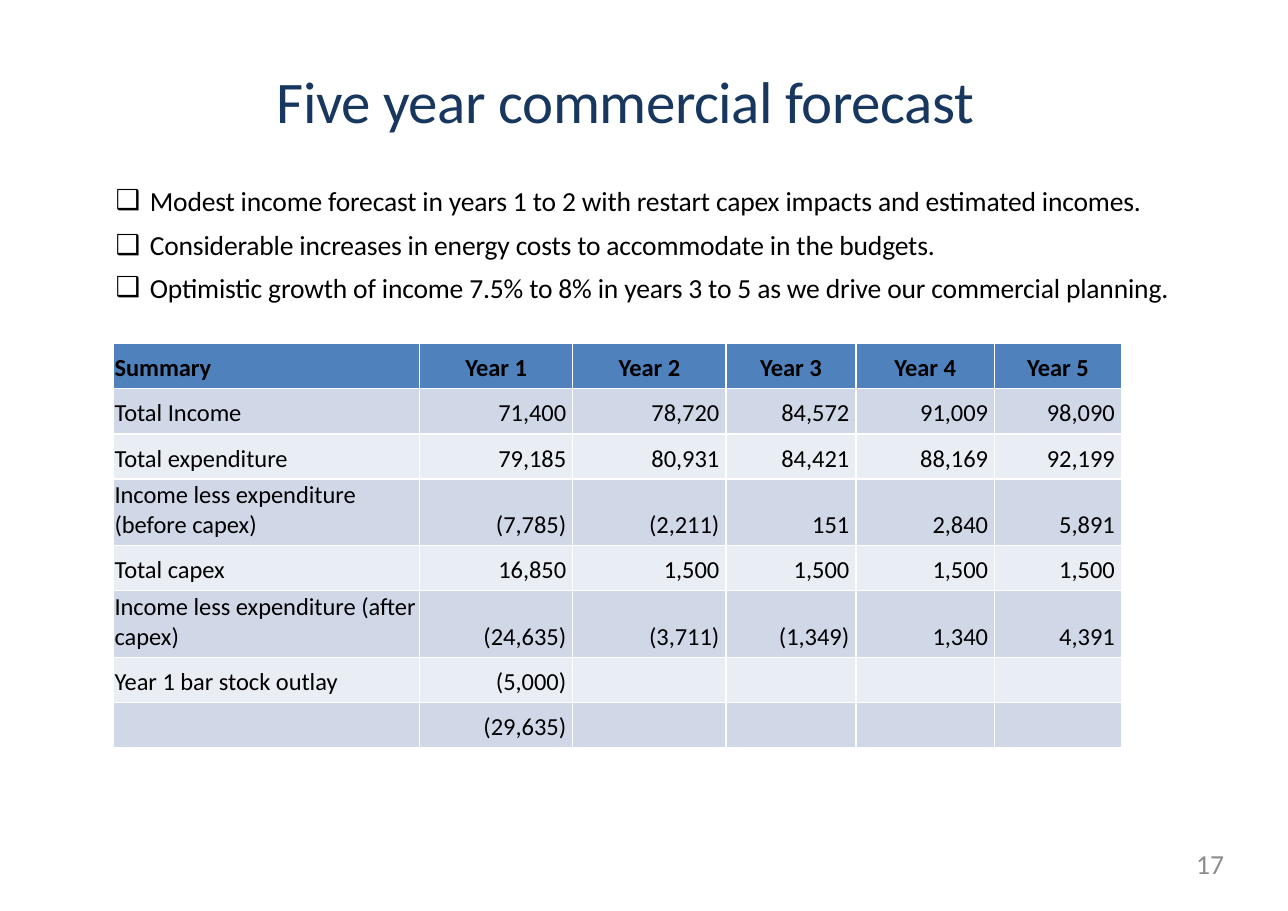
"""Build the five year commercial forecast slide."""
from dataclasses import dataclass

import pptx
import pptx.dml.color
import pptx.enum.text
import pptx.oxml.ns
import pptx.presentation
import pptx.shapes.autoshape
import pptx.slide
import pptx.table
import pptx.text.text
import pptx.util
from lxml import etree

SLIDE_WIDTH = pptx.util.Inches(11.69)
SLIDE_HEIGHT = pptx.util.Inches(8.27)
LEFT, CENTER, RIGHT = (
    pptx.enum.text.PP_ALIGN.LEFT,
    pptx.enum.text.PP_ALIGN.CENTER,
    pptx.enum.text.PP_ALIGN.RIGHT,
)
HEADER_FILL = "4F81BD"
BAND_FILLS = ("D0D8E8", "E9EDF4")


@dataclass(frozen=True)
class Region:
    """A rectangle in hundredths of the slide's width and height."""
    left: float
    top: float
    width: float
    height: float

    def box(self) -> tuple[int, int, int, int]:
        """Return left, top, width and height as slide lengths."""
        return (columns(self.left), rows(self.top), columns(self.width), rows(self.height))


@dataclass(frozen=True)
class TextStyle:
    """The look of a paragraph; tracking is in hundredths of a point."""
    size: float
    color: str = "000000"
    bold: bool = False
    align: pptx.enum.text.PP_ALIGN = LEFT
    tracking: int = 0


@dataclass(frozen=True)
class Point:
    """A bulleted statement and the space above it in points."""
    text: str
    space_before: float


TITLE_REGION = Region(21.47, 6.89, 54.92, 8.1)
POINTS_REGION = Region(8.81, 18.98, 83.49, 14.39)
PAGE_REGION = Region(72.03, 92.99, 23.01, 4.96)
FORECAST_COLUMNS = (23.78, 11.89, 11.89, 10.09, 10.78, 9.84)
FORECAST_ROW = 4.96

POINTS = (
    Point("Modest income forecast in years 1 to 2 with restart capex impacts and estimated incomes.", 7.2),
    Point("Considerable increases in energy costs to accommodate in the budgets.", 7.2),
    Point("Optimistic growth of income 7.5% to 8% in years 3 to 5 as we drive our commercial planning.", 6.2),
)
FORECAST = (
    ("Summary", "Year 1", "Year 2", "Year 3", "Year 4", "Year 5"),
    ("Total Income", "71,400", "78,720", "84,572", "91,009", "98,090"),
    ("Total expenditure", "79,185", "80,931", "84,421", "88,169", "92,199"),
    ("Income less expenditure (before capex)", "(7,785)", "(2,211)", "151", "2,840", "5,891"),
    ("Total capex", "16,850", "1,500", "1,500", "1,500", "1,500"),
    ("Income less expenditure (after capex)", "(24,635)", "(3,711)", "(1,349)", "1,340", "4,391"),
    ("Year 1 bar stock outlay", "(5,000)", "", "", "", ""),
    ("", "(29,635)", "", "", "", ""),
)


def columns(share: float) -> int:
    """Convert hundredths of the slide's width to a length."""
    return round(SLIDE_WIDTH * share / 100)


def rows(share: float) -> int:
    """Convert hundredths of the slide's height to a length."""
    return round(SLIDE_HEIGHT * share / 100)


def rgb(color: str) -> pptx.dml.color.RGBColor:
    """Turn a hex string into a colour."""
    return pptx.dml.color.RGBColor.from_string(color)


def style_paragraph(paragraph: pptx.text.text._Paragraph, style: TextStyle) -> None:
    """Apply a text style to a whole paragraph."""
    paragraph.alignment = style.align
    font = paragraph.font
    font.name = "Calibri"
    font.size = pptx.util.Pt(style.size)
    font.bold = style.bold
    font.color.rgb = rgb(style.color)
    if style.tracking:
        paragraph._p.pPr.defRPr.set("spc", str(style.tracking))


def place(shape: pptx.shapes.autoshape.Shape, region: Region, inset_top: float) -> pptx.text.text.TextFrame:
    """Move a text shape into its region and prepare its frame."""
    shape.left, shape.top, shape.width, shape.height = region.box()
    frame = shape.text_frame
    frame.word_wrap = True
    frame.auto_size = pptx.enum.text.MSO_AUTO_SIZE.NONE
    frame.vertical_anchor = pptx.enum.text.MSO_ANCHOR.TOP
    frame.margin_left = frame.margin_right = frame.margin_bottom = 0
    frame.margin_top = pptx.util.Inches(inset_top)
    return frame


def add_bullet(paragraph: pptx.text.text._Paragraph) -> None:
    """Give a paragraph a box bullet with a hanging indent."""
    properties = paragraph._p.get_or_add_pPr()
    properties.set("marL", str(pptx.util.Inches(0.33)))
    properties.set("indent", str(pptx.util.Inches(-0.31)))
    bullet = etree.SubElement(properties, pptx.oxml.ns.qn("a:buChar"))
    bullet.set("char", "❑")


def add_title(slide: pptx.slide.Slide) -> None:
    """Write the slide's title."""
    frame = place(slide.shapes.title, TITLE_REGION, 0.02)
    frame.text = "Five year commercial forecast"
    heading = frame.paragraphs[0]
    heading.space_before = pptx.util.Pt(1.1)
    style_paragraph(heading, TextStyle(38.5, "17375E", tracking=-30))


def add_points(slide: pptx.slide.Slide) -> None:
    """Write the bulleted statements."""
    frame = place(slide.placeholders[1], POINTS_REGION, 0.1)
    frame.text = "\n".join(point.text for point in POINTS)
    for paragraph, point in zip(frame.paragraphs, POINTS):
        add_bullet(paragraph)
        paragraph.space_before = pptx.util.Pt(point.space_before)
        style_paragraph(paragraph, TextStyle(18, tracking=-10))


def add_page_number(slide: pptx.slide.Slide) -> None:
    """Write the page number in the lower right corner."""
    frame = place(slide.shapes.add_textbox(*PAGE_REGION.box()), PAGE_REGION, 0)
    frame.text = "17"
    style_paragraph(frame.paragraphs[0], TextStyle(18, "8C8C8C", align=RIGHT))


def fill_cell(cell: pptx.table._Cell, text: str, fill: str, style: TextStyle) -> None:
    """Write and format one cell of the forecast."""
    cell.text = text
    cell.vertical_anchor = pptx.enum.text.MSO_ANCHOR.BOTTOM
    cell.margin_left = cell.margin_top = pptx.util.Inches(0.01)
    cell.margin_right = pptx.util.Inches(0.06 if style.align == RIGHT else 0.01)
    cell.margin_bottom = pptx.util.Inches(0.05)
    cell.fill.solid()
    cell.fill.fore_color.rgb = rgb(fill)
    style_paragraph(cell.text_frame.paragraphs[0], style)


def add_forecast(slide: pptx.slide.Slide) -> None:
    """Add the table of yearly figures."""
    region = Region(8.81, 37.73, sum(FORECAST_COLUMNS), FORECAST_ROW * len(FORECAST))
    table = slide.shapes.add_table(len(FORECAST), len(FORECAST_COLUMNS), *region.box()).table
    for column, width in zip(table.columns, FORECAST_COLUMNS):
        column.width = columns(width)
    for row_index, entries in enumerate(FORECAST):
        header = row_index == 0
        fill = HEADER_FILL if header else BAND_FILLS[(row_index - 1) % 2]
        for column_index, entry in enumerate(entries):
            align = LEFT if column_index == 0 else CENTER if header else RIGHT
            fill_cell(table.cell(row_index, column_index), entry, fill, TextStyle(16, bold=header, align=align))


def main() -> None:
    """Build and save the presentation."""
    deck = pptx.Presentation()
    deck.slide_width, deck.slide_height = SLIDE_WIDTH, SLIDE_HEIGHT
    slide = deck.slides.add_slide(deck.slide_layouts[1])
    add_title(slide)
    add_points(slide)
    add_page_number(slide)
    add_forecast(slide)
    deck.save("out.pptx")


if __name__ == "__main__":
    main()
